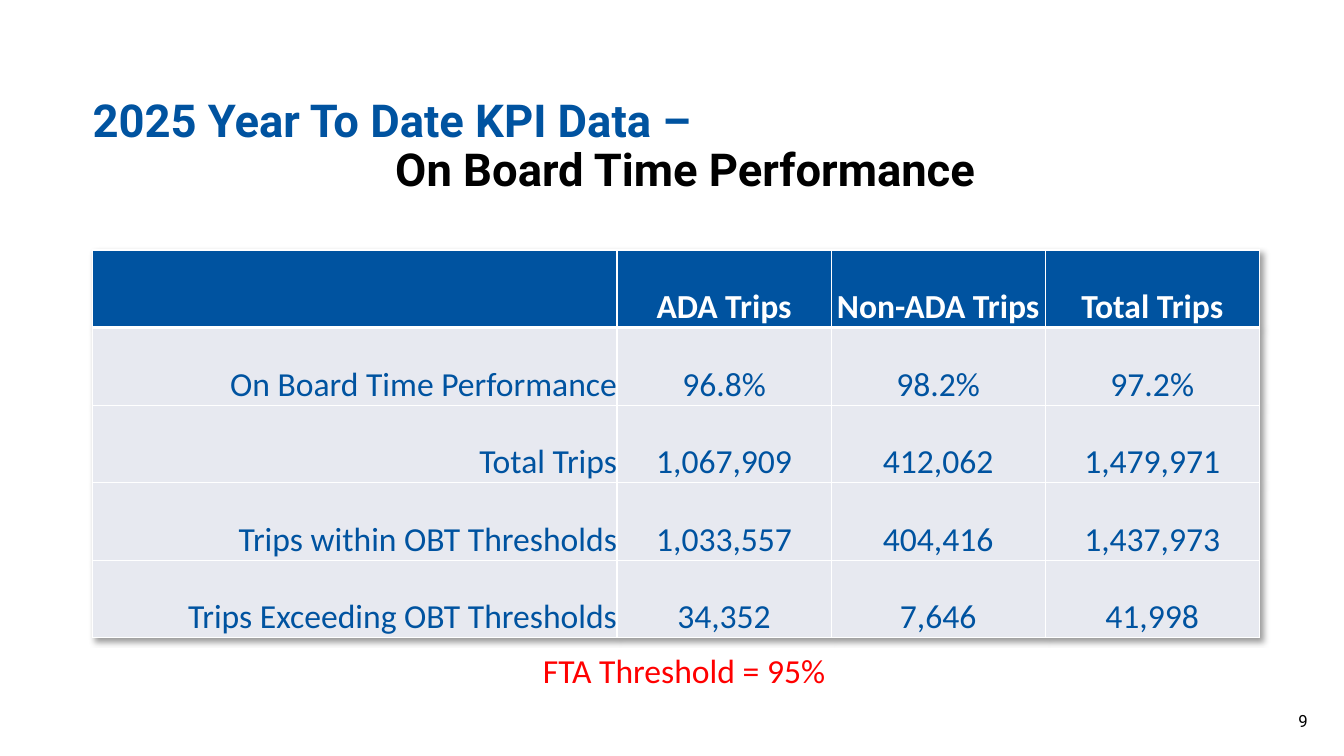
from lxml.etree import SubElement
from pptx import Presentation
from pptx.dml.color import RGBColor
from pptx.enum.text import MSO_ANCHOR, PP_ALIGN
from pptx.oxml import parse_xml
from pptx.oxml.ns import nsdecls, qn
from pptx.util import Inches, Pt

BLUE, BLACK, WHITE, RED, PALE = "0053A0", "000000", "FFFFFF", "FF0000", "E7E9F0"

TITLE = [("2025 Year To Date KPI Data –", BLUE, 0), ("On Board Time Performance", BLACK, 3)]
ROWS = [
    ("", "ADA Trips", "Non-ADA Trips", "Total Trips"),
    ("On Board Time Performance", "96.8%", "98.2%", "97.2%"),
    ("Total Trips", "1,067,909", "412,062", "1,479,971"),
    ("Trips within OBT Thresholds", "1,033,557", "404,416", "1,437,973"),
    ("Trips Exceeding OBT Thresholds", "34,352", "7,646", "41,998"),
]
THRESHOLD = "FTA Threshold = 95%"
PAGE_NUMBER = "9"

LEFT, WIDTH = 0.92, 11.57
TABLE_TOP, ROW_HEIGHT = 2.48, 0.77
LABEL_WIDTH = 5.2
VALUE_WIDTH = (WIDTH - LABEL_WIDTH) / 3


def color(value):
    return RGBColor.from_string(value)


def style(para, font, size, fill, bold=False, align=PP_ALIGN.LEFT):
    para.alignment = align
    para.font.name, para.font.size, para.font.bold = font, Pt(size), bold
    para.font.color.rgb = color(fill)
    for span in para.runs:
        span.font.name, span.font.size, span.font.bold = font, Pt(size), bold
        span.font.color.rgb = color(fill)


def add_text(page, place, lines, anchor, insets):
    box = page.shapes.add_textbox(*map(Inches, place))
    frame = box.text_frame
    frame.word_wrap = True
    frame.vertical_anchor = anchor
    (frame.margin_left, frame.margin_top,
     frame.margin_right, frame.margin_bottom) = map(Inches, insets)
    frame.text = "\n".join(lines)
    return frame.paragraphs


def add_borders(cell, bottom):
    """Draw white cell edges, with the bottom one as wide as given in points."""
    properties = cell._tc.get_or_add_tcPr()
    edges = [("lnL", 1), ("lnR", 1), ("lnT", 1), ("lnB", bottom)]
    for position, (edge, width) in enumerate(edges):
        line = parse_xml(
            f'<a:{edge} {nsdecls("a")} w="{Pt(width)}"><a:solidFill>'
            f'<a:srgbClr val="{WHITE}"/></a:solidFill></a:{edge}>')
        properties.insert(position, line)


def add_table_shadow(table):
    effects = parse_xml(f'<a:effectLst {nsdecls("a")}/>')
    shadow = SubElement(effects, qn("a:outerShdw"), blurRad=str(Pt(4)),
                        dist=str(Pt(3)), dir="2700000", algn="tl", rotWithShape="0")
    shade = SubElement(shadow, qn("a:srgbClr"), val=BLACK)
    SubElement(shade, qn("a:alpha"), val="40000")
    table._tbl.tblPr.insert(0, effects)


def add_kpi_table(page):
    table = page.shapes.add_table(
        len(ROWS), len(ROWS[0]), Inches(LEFT), Inches(TABLE_TOP),
        Inches(WIDTH), Inches(ROW_HEIGHT * len(ROWS))).table
    add_table_shadow(table)
    for index, column in enumerate(table.columns):
        column.width = Inches(VALUE_WIDTH if index else LABEL_WIDTH)
    for row_index, values in enumerate(ROWS):
        table.rows[row_index].height = Inches(ROW_HEIGHT)
        header = row_index == 0
        for column_index, value in enumerate(values):
            cell = table.cell(row_index, column_index)
            cell.text = value
            cell.vertical_anchor = MSO_ANCHOR.BOTTOM
            cell.margin_left = cell.margin_right = 0
            cell.margin_top = cell.margin_bottom = 0
            cell.fill.solid()
            cell.fill.fore_color.rgb = color(BLUE if header else PALE)
            add_borders(cell, 3 if header else 1)
            style(cell.text_frame.paragraphs[0], "Calibri", 24,
                  WHITE if header else BLUE, header,
                  PP_ALIGN.CENTER if column_index else PP_ALIGN.RIGHT)


def main():
    deck = Presentation()
    deck.slide_width, deck.slide_height = Inches(13.33), Inches(7.5)
    page = deck.slides.add_slide(deck.slide_layouts[6])

    title = add_text(page, (LEFT, 0.67, WIDTH, 1.33), [line[0] for line in TITLE],
                     MSO_ANCHOR.BOTTOM, (0, 0.4, 0, 0.05))
    for para, (_, fill, indent) in zip(title, TITLE):
        para.line_spacing = 0.9
        para._p.get_or_add_pPr().set("marL", str(Inches(indent)))
        style(para, "Roboto", 32.4, fill, bold=True)

    add_kpi_table(page)

    note = add_text(page, (2.12, 6.4, 9.33, 0.5), [THRESHOLD],
                    MSO_ANCHOR.TOP, (0.1, 0.05, 0.1, 0.05))
    style(note[0], "Calibri", 24, RED, align=PP_ALIGN.CENTER)

    number = add_text(page, (11.37, 6.95, 1.6, 0.4), [PAGE_NUMBER],
                      MSO_ANCHOR.MIDDLE, (0.1, 0.05, 0, 0.05))
    style(number[0], "Roboto", 12, BLACK, align=PP_ALIGN.RIGHT)

    deck.save("out.pptx")


if __name__ == "__main__":
    main()
